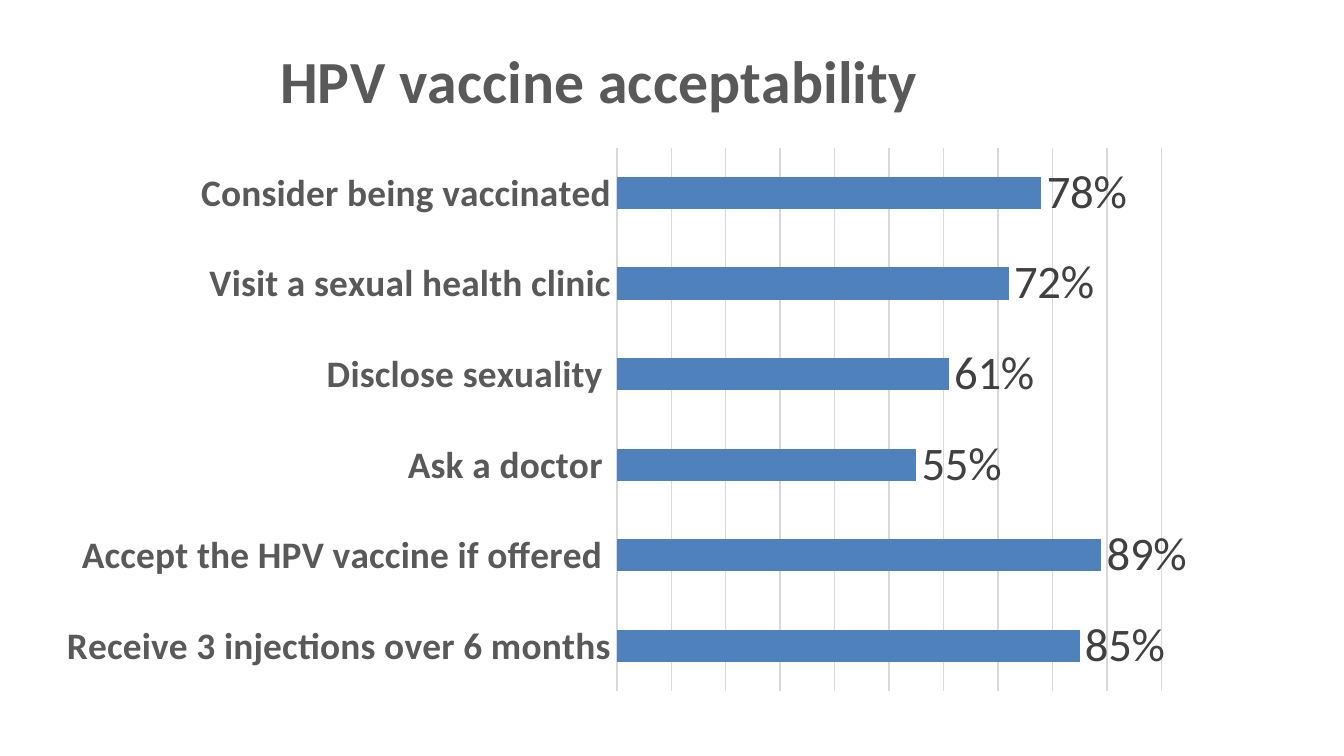
from lxml.etree import SubElement
from pptx import Presentation
from pptx.chart.data import CategoryChartData as Data
from pptx.dml.color import RGBColor as RGB
from pptx.enum.chart import XL_CHART_TYPE as Kind
from pptx.enum.chart import XL_LABEL_POSITION as Place
from pptx.enum.chart import XL_TICK_LABEL_POSITION as Label
from pptx.enum.chart import XL_TICK_MARK as Tick
from pptx.oxml import parse_xml
from pptx.oxml.ns import nsdecls, qn
from pptx.util import Inches, Pt

COLORS = {"bar": "4F81BD", "text": "595959", "value": "404040", "grid": "D9D9D9"}
FONT = "Calibri"
TITLE = "HPV vaccine acceptability"
RATES = {
    "Receive 3 injections over 6 months": 0.85,
    "Accept the HPV vaccine if offered ": 0.89,
    "Ask a doctor ": 0.55,
    "Disclose sexuality ": 0.61,
    "Visit a sexual health clinic": 0.72,
    "Consider being vaccinated": 0.78,
}


def style(font, size, color="text", bold=False):
    font.name, font.size, font.bold = FONT, Pt(size), bold
    font.color.rgb = RGB.from_string(COLORS[color])


def rule(line):
    line.color.rgb = RGB.from_string(COLORS["grid"])
    line.width = Pt(0.75)


def write(frame, text, **form):
    """Put formatted text in a text frame."""
    run = frame.paragraphs[0].add_run()
    run.text = text
    style(run.font, **form)


def place(part, index, **values):
    """Give a chart part a manual layout, in fractions of the chart."""
    for old in part.findall(qn("c:layout")):
        part.remove(old)
    layout = parse_xml(f"<c:layout {nsdecls('c')}/>")
    manual = SubElement(layout, qn("c:manualLayout"))
    for name, value in values.items():
        SubElement(manual, qn(f"c:{name}")).set("val", str(value))
    part.insert(index, layout)


def set_title(chart):
    chart.has_title = True
    title = chart.chart_title
    write(title.text_frame, TITLE, size=32, bold=True)
    part = chart.element.find(".//" + qn("c:title"))
    place(part, 1, xMode="edge", yMode="edge", x=0.2, y=0)


def set_axes(chart):
    cats, rates = chart.category_axis, chart.value_axis
    cats.major_tick_mark = cats.minor_tick_mark = Tick.NONE
    cats.tick_label_position = Label.NEXT_TO_AXIS
    cats.has_major_gridlines = False
    style(cats.tick_labels.font, 20, bold=True)
    rule(cats.format.line)
    rates.minimum_scale, rates.maximum_scale, rates.major_unit = 0, 1, 0.1
    rates.has_major_gridlines = True
    rule(rates.major_gridlines.format.line)
    rates.tick_labels.number_format = "0%"
    rates.tick_labels.number_format_is_linked = False
    rates.visible = False


def set_bars(chart):
    plot = chart.plots[0]
    plot.gap_width = 182
    plot.vary_by_categories = False
    bars = plot.series[0]
    bars.format.fill.solid()
    bars.format.fill.fore_color.rgb = RGB.from_string(COLORS["bar"])
    labels = bars.data_labels
    labels.show_value = True
    labels.number_format = "0%"
    labels.number_format_is_linked = False
    labels.position = Place.OUTSIDE_END
    style(labels.font, 25, "value")
    area = chart.element.find(".//" + qn("c:plotArea"))
    place(area, 0, layoutTarget="inner", xMode="edge", yMode="edge",
          x=0.5, y=0.18, w=0.47, h=0.82)


def add_bars(slide):
    data = Data(number_format="0%")
    data.categories = list(RATES)
    data.add_series("Series 1", list(RATES.values()))
    box = [Inches(n) for n in (0.28, 0.21, 8.62, 4.94)]
    chart = slide.shapes.add_chart(Kind.BAR_CLUSTERED, *box, data).chart
    chart.has_legend = False
    style(chart.font, 10)
    set_title(chart)
    set_axes(chart)
    set_bars(chart)


def main():
    deck = Presentation()
    deck.slide_width = Inches(10)
    deck.slide_height = Inches(10 * 9 / 16)
    add_bars(deck.slides.add_slide(deck.slide_layouts[6]))
    deck.save("out.pptx")


if __name__ == "__main__":
    main()
